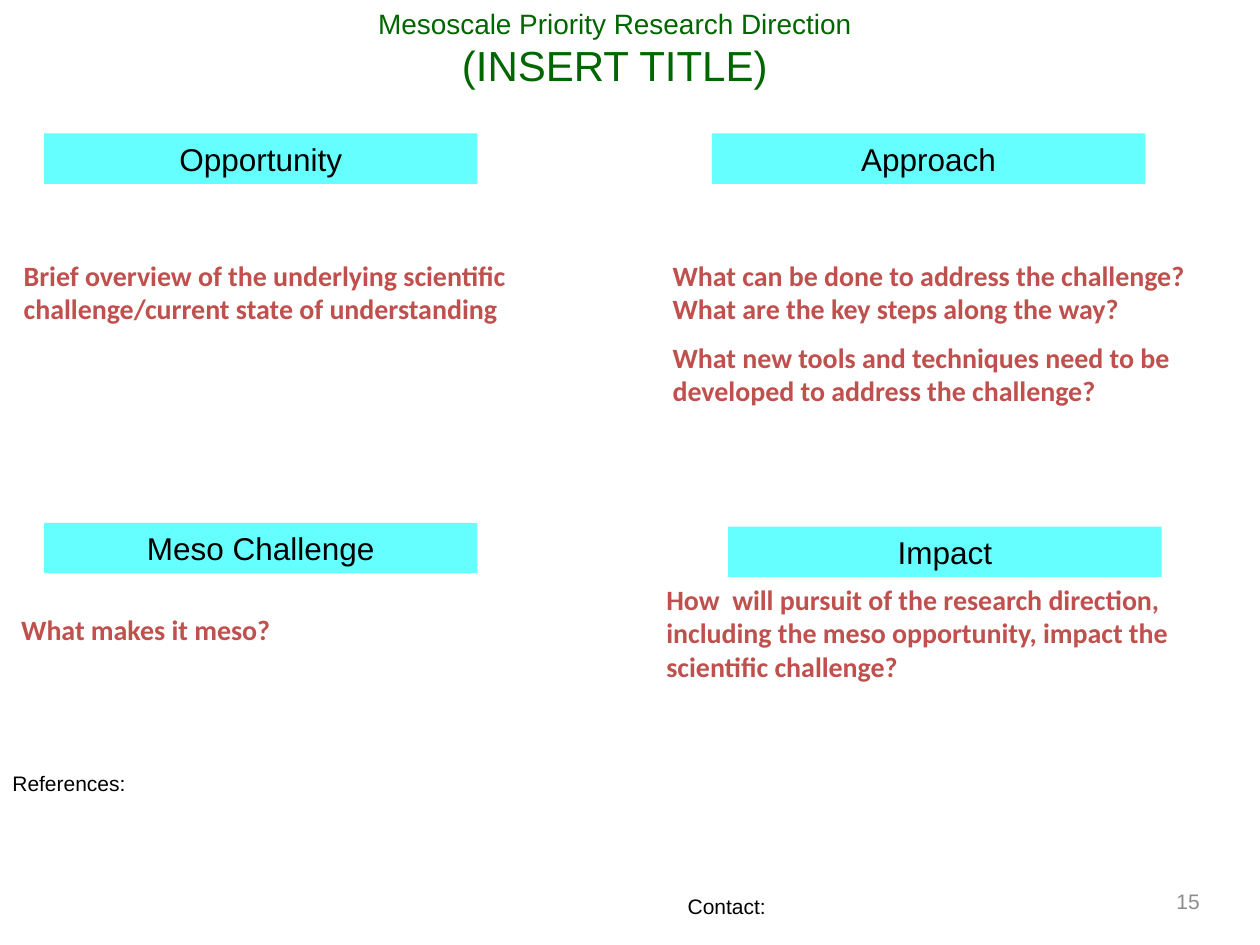
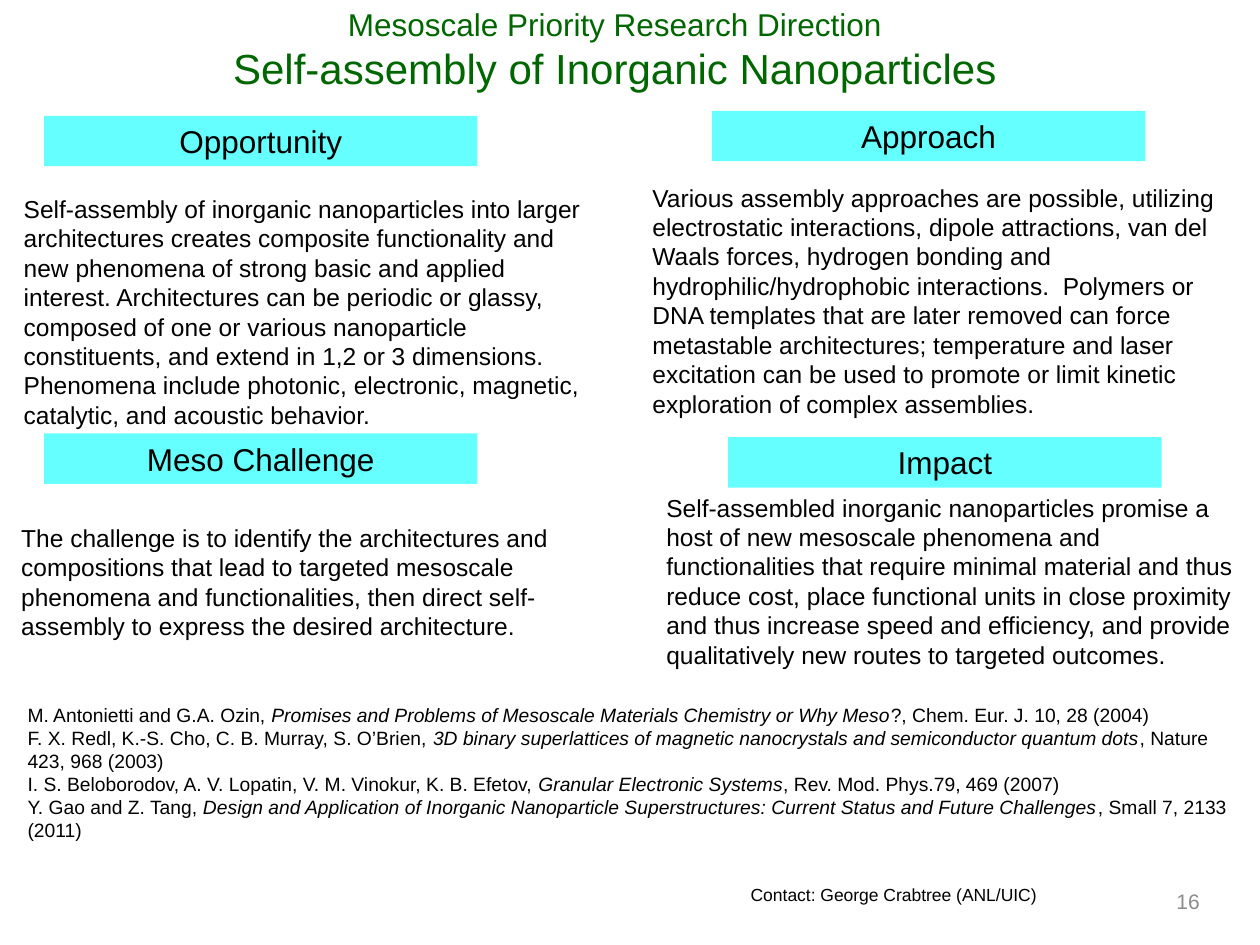
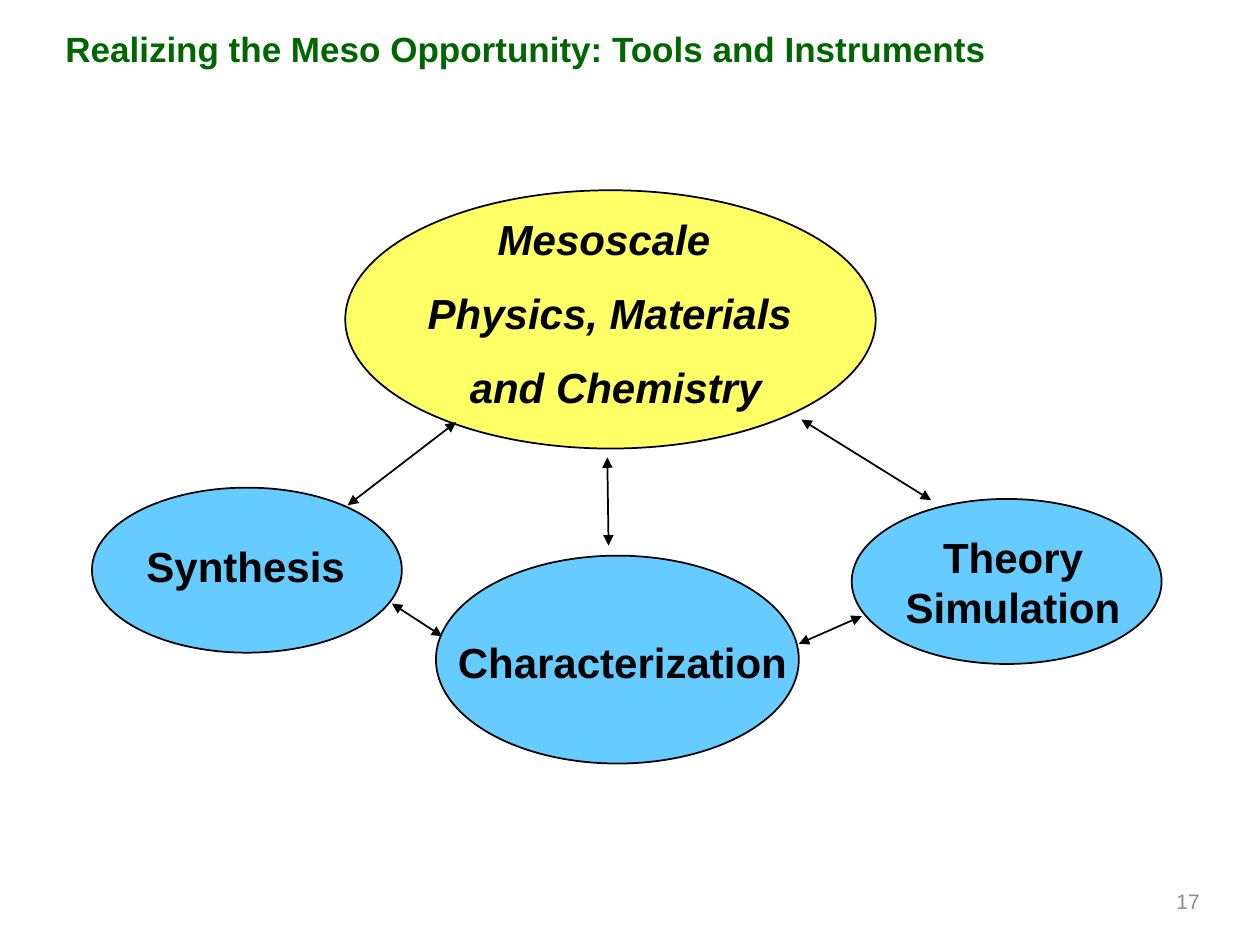
from lxml import etree
from pptx import Presentation
from pptx.dml.color import RGBColor
from pptx.enum.shapes import MSO_CONNECTOR, MSO_SHAPE
from pptx.enum.text import MSO_ANCHOR, MSO_AUTO_SIZE, PP_ALIGN
from pptx.oxml.ns import qn
from pptx.util import Inches, Pt

RECTANGLE, OVAL = MSO_SHAPE.RECTANGLE, MSO_SHAPE.OVAL
STRAIGHT = MSO_CONNECTOR.STRAIGHT
LEFT, CENTER, RIGHT = PP_ALIGN.LEFT, PP_ALIGN.CENTER, PP_ALIGN.RIGHT
TOP, MIDDLE = MSO_ANCHOR.TOP, MSO_ANCHOR.MIDDLE
GROW, FIXED = MSO_AUTO_SIZE.SHAPE_TO_FIT_TEXT, MSO_AUTO_SIZE.NONE

# Grid of 100 columns by 75 rows
SLIDE_WIDTH, SLIDE_HEIGHT = Inches(10), Inches(7.5)
COLUMN, ROW = SLIDE_WIDTH / 100, SLIDE_HEIGHT / 75

GREEN, BLACK, GREY, RED = "006600", "000000", "8C8C8C", "C0504D"
CYAN, BLUE, YELLOW = "66FFFF", "66CCFF", "FFFF66"

# Text formats
HEADING = {"name": "Arial", "size": Pt(18), "color": BLACK}
BODY = {**HEADING, "size": Pt(14)}
PROMPT = {"name": "Calibri", "size": Pt(16), "bold": True, "color": RED}
NOTE = {**HEADING, "size": Pt(12)}
REFERENCE = {**HEADING, "size": Pt(11)}
CONTACT = {**HEADING, "size": Pt(10)}
PAGE_NUMBER = {**NOTE, "color": GREY}
TITLE = {**HEADING, "size": Pt(24), "color": GREEN}
LABEL = {**HEADING, "size": Pt(24), "bold": True}

# Left column of each banner
BANNERS = {"Opportunity": 3.5, "Meso Challenge": 3.5, "Approach": 56.5, "Impact": 57.8}

# Each panel: heading, banner row, text area, paragraphs
TEMPLATE_PANELS = [
    ("Opportunity", 10.6, (0.9, 20, 46.6, 6.4),
     ["Brief overview of the underlying scientific challenge/current state of understanding"]),
    ("Meso Challenge", 41.5, (0.7, 48.1, 47.5, 3.7), ["What makes it meso?"]),
    ("Approach", 10.6, (52.4, 20, 47.6, 13.1),
     ["What can be done to address the challenge? What are the key steps along the way?",
      "What new tools and techniques need to be developed to address the challenge?"]),
    ("Impact", 41.8, (51.9, 45.7, 48.1, 11.8),
     ["How  will pursuit of the research direction, including the meso opportunity, "
      "impact the scientific challenge?"]),
]
NANOPARTICLE_PANELS = [
    ("Opportunity", 9.2, (0.9, 14.9, 46.6, 19.9),
     ["Self-assembly of inorganic nanoparticles into larger architectures creates composite "
      "functionality and new phenomena of strong basic and applied interest. Architectures can "
      "be periodic or glassy, composed of one or various nanoparticle constituents, and extend "
      "in 1,2 or 3 dimensions. Phenomena include photonic, electronic, magnetic, catalytic, and "
      "acoustic behavior."]),
    ("Meso Challenge", 34.4, (0.7, 41, 47.5, 10.4),
     ["The challenge is to identify the architectures and compositions that lead to targeted "
      "mesoscale phenomena and functionalities, then direct self-assembly to express the "
      "desired architecture."]),
    ("Approach", 8.8, (50.8, 14, 47.6, 19.9),
     ["Various assembly approaches are possible, utilizing electrostatic interactions, dipole "
      "attractions, van del Waals forces, hydrogen bonding and hydrophilic/hydrophobic "
      "interactions.  Polymers or DNA templates that are later removed can force metastable "
      "architectures; temperature and laser excitation can be used to promote or limit kinetic "
      "exploration of complex assemblies."]),
    ("Impact", 34.7, (51.9, 38.6, 48.1, 15.1),
     ["Self-assembled inorganic nanoparticles promise a host of new mesoscale phenomena and "
      "functionalities that require minimal material and thus reduce cost, place functional "
      "units in close proximity and thus increase speed and efficiency, and provide "
      "qualitatively new routes to targeted outcomes."]),
]

# Each reference: authors, work, source
REFERENCES = [
    ("M. Antonietti and G.A. Ozin, ",
     "Promises and Problems of Mesoscale Materials Chemistry or Why Meso",
     "?, Chem. Eur. J. 10, 28 (2004)"),
    ("F. X. Redl, K.-S. Cho, C. B. Murray, S. O’Brien, ",
     "3D binary superlattices of magnetic nanocrystals and semiconductor quantum dots",
     ", Nature 423, 968 (2003)"),
    ("I. S. Beloborodov, A. V. Lopatin, V. M. Vinokur, K. B. Efetov, ",
     "Granular Electronic Systems", ", Rev. Mod. Phys.79, 469 (2007)"),
    ("Y. Gao and Z. Tang, ",
     "Design and Application of Inorganic Nanoparticle Superstructures: "
     "Current Status and Future Challenges", ", Small 7, 2133 (2011)"),
]

# Each field: oval area, fill, label area, lines, italic, gap between lines
FIELDS = [
    ((7.3, 38.7, 24.6, 13.1), BLUE, (10.6, 42.4, 17.8, 5), ["Synthesis"], False, 0),
    ((34.6, 44.1, 28.8, 16.5), BLUE, (32.1, 49.4, 34.6, 6.3), ["Characterization"], False, 0),
    ((67.6, 39.6, 24.6, 13.1), BLUE, (70.8, 41.6, 19.2, 9.1), ["Theory", "Simulation"], False, 0),
    ((27.4, 15.1, 42.1, 20.5), YELLOW, (32.4, 16.2, 32, 17.2),
     ["Mesoscale ", "Physics, Materials", " and Chemistry"], True, 13.5),
]
# Each arrow: start column and row, end column and row
ARROWS = [
    (36.2, 33.5, 27.6, 40.1),
    (63.6, 33.3, 73.9, 39.7),
    (48.2, 36.3, 48.3, 43.3),
    (31.1, 47.9, 35.1, 50.5),
    (68.4, 48.9, 63.4, 51.1),
]


def hex_color(value):
    return RGBColor.from_string(value)


def place(column, row, columns, rows):
    """Turn grid units into slide lengths."""
    return [round(length) for length in (column * COLUMN, row * ROW, columns * COLUMN, rows * ROW)]


def add_span(para, text, style):
    span = para.add_run()
    span.text = text
    for name, value in style.items():
        if name == "color":
            span.font.color.rgb = hex_color(value)
        else:
            setattr(span.font, name, value)


def write(box, paragraphs, align=LEFT, gap=0, **frame_format):
    """Fill a box with paragraphs, each a list of (text, style) spans."""
    frame = box.text_frame
    settings = {"word_wrap": True, "auto_size": GROW, "vertical_anchor": TOP, **frame_format}
    for name, value in settings.items():
        setattr(frame, name, value)
    for index, spans in enumerate(paragraphs):
        para = frame.add_paragraph() if index else frame.paragraphs[0]
        para.alignment = align
        if index and gap:
            para.space_before = Pt(gap)
        for text, style in spans:
            add_span(para, text, style)


def add_text(page, area, lines, style, **layout):
    box = page.shapes.add_textbox(*place(*area))
    write(box, [[(line, style)] for line in lines], **layout)


def add_filled(page, kind, area, fill, outline=None):
    shape = page.shapes.add_shape(kind, *place(*area))
    shape.shadow.inherit = False
    shape.fill.solid()
    shape.fill.fore_color.rgb = hex_color(fill)
    if outline:
        shape.line.color.rgb = hex_color(outline)
        shape.line.width = Pt(1)
    else:
        shape.line.fill.background()
    return shape


def add_double_arrow(page, start_column, start_row, end_column, end_row):
    ends = place(start_column, start_row, end_column, end_row)
    arrow = page.shapes.add_connector(STRAIGHT, *ends)
    arrow.line.color.rgb = hex_color(BLACK)
    arrow.line.width = Pt(1)
    line = arrow.line._get_or_add_ln()
    for tag in ("a:headEnd", "a:tailEnd"):
        etree.SubElement(line, qn(tag), type="triangle")
    etree.SubElement(arrow._element.spPr, qn("a:effectLst"))


def add_page(deck, number):
    page = deck.slides.add_slide(deck.slide_layouts[6])
    add_text(page, (92, 69.5, 4.2, 4), [str(number)], PAGE_NUMBER,
             align=RIGHT, vertical_anchor=MIDDLE, auto_size=FIXED)
    return page


def add_direction_title(page, row, rows, title, overline_size):
    box = page.shapes.add_textbox(*place(3.1, row, 91.4, rows))
    overline = {**TITLE, "size": Pt(overline_size)}
    write(box, [[("Mesoscale Priority Research Direction", overline)], [(title, TITLE)]],
          align=CENTER)


def add_panels(page, panels, style):
    for heading, banner_row, area, lines in panels:
        banner = add_filled(page, RECTANGLE, (BANNERS[heading], banner_row, 34.4, 4), CYAN)
        write(banner, [[(heading, HEADING)]], align=CENTER)
        add_text(page, area, lines, style, gap=8.5)


def add_references(page):
    box = page.shapes.add_textbox(*place(1.2, 55.3, 97.5, 8.4))
    italic = {**REFERENCE, "italic": True}
    write(box, [[(authors, REFERENCE), (work, italic), (source, REFERENCE)]
                for authors, work, source in REFERENCES])


def add_field(page, oval_area, fill, label_area, lines, italic, gap):
    add_filled(page, OVAL, oval_area, fill, BLACK)
    add_text(page, label_area, lines, {**LABEL, "italic": italic}, align=CENTER, gap=gap,
             vertical_anchor=MIDDLE, word_wrap=False)


def main():
    deck = Presentation()
    deck.slide_width, deck.slide_height = SLIDE_WIDTH, SLIDE_HEIGHT

    # Empty research direction form
    page = add_page(deck, 15)
    add_direction_title(page, 0, 7.7, "(INSERT TITLE)", 16)
    add_panels(page, TEMPLATE_PANELS, PROMPT)
    add_text(page, (0, 60.7, 63.1, 3), ["References:"], NOTE)
    add_text(page, (53.6, 70.4, 21.6, 3), ["Contact:"], NOTE)

    # Completed research direction
    page = add_page(deck, 16)
    add_direction_title(page, -0.1, 8.1, "Self-assembly of Inorganic Nanoparticles", 18)
    add_panels(page, NANOPARTICLE_PANELS, BODY)
    add_references(page)
    add_text(page, (58.6, 69.7, 25, 2.7), ["Contact: George Crabtree (ANL/UIC)"], CONTACT,
             word_wrap=False)

    # Diagram of linked fields
    page = add_page(deck, 17)
    add_text(page, (4.2, 1.7, 90.1, 4.4),
             ["Realizing the Meso Opportunity: Tools and Instruments"],
             {**TITLE, "size": Pt(20), "bold": True})
    for field in FIELDS:
        add_field(page, *field)
    for arrow in ARROWS:
        add_double_arrow(page, *arrow)

    deck.save("out.pptx")


if __name__ == "__main__":
    main()
